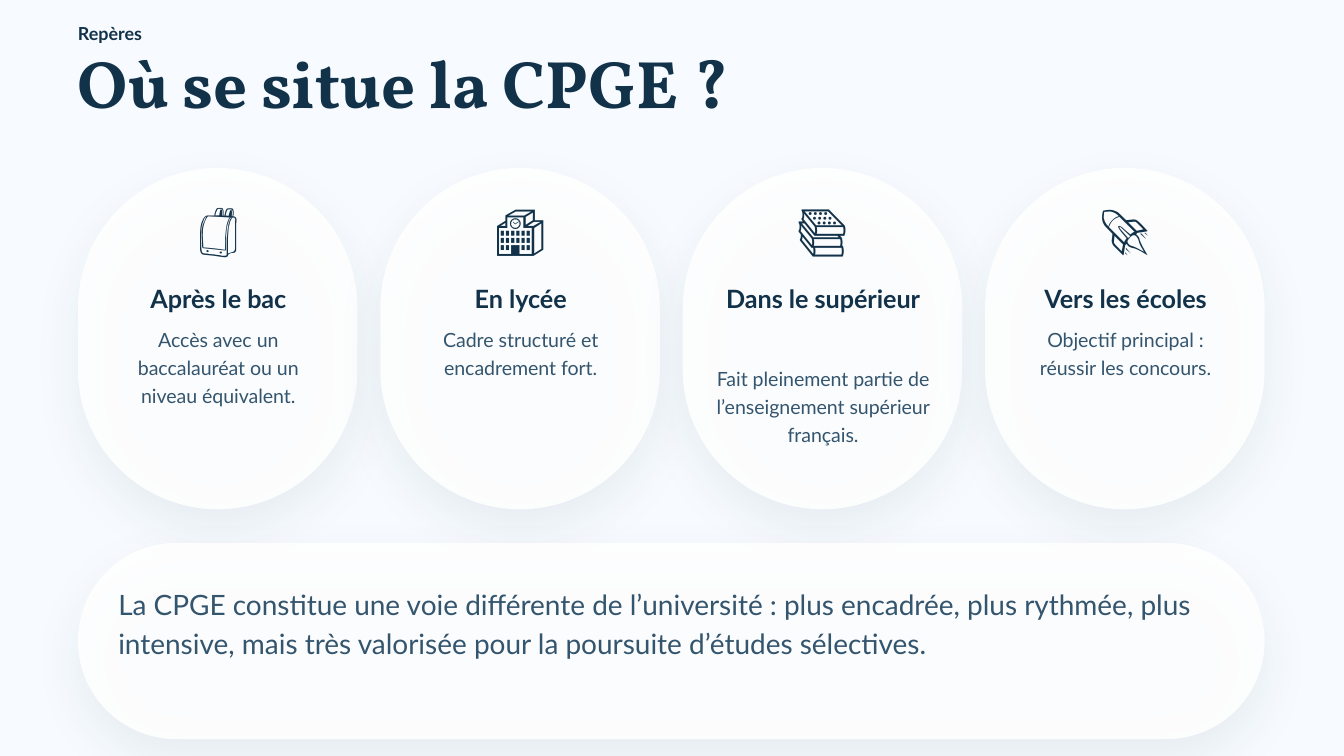
from dataclasses import dataclass

from lxml.etree import SubElement
from pptx import Presentation
from pptx.dml.color import RGBColor
from pptx.enum.shapes import MSO_SHAPE as Shape
from pptx.enum.text import MSO_ANCHOR as Anchor, MSO_AUTO_SIZE as Fit, PP_ALIGN as Align
from pptx.oxml.ns import qn
from pptx.util import Inches, Pt


@dataclass(frozen=True)
class Theme:
    back: str = "F7FBFF"
    panel: str = "FFFFFF"
    ink: str = "12324A"
    soft: str = "34556E"
    head: str = "Vollkorn"
    body: str = "Lato"
    # Type size and line height, in points
    tag: tuple = (9.6, 14.4)
    title: tuple = (36, 36)
    icon: tuple = (27, 30)
    label: tuple = (13.5, 21)
    note: tuple = (10.5, 15)
    lead: tuple = (15, 21)


THEME = Theme()

LEFT = 0.58
PITCH = 2.25
INSET = 0.25

# Icon, heading, note, heading height, note height
CARDS = [
    ("🎒", "Après le bac", "Accès avec un baccalauréat ou un niveau équivalent.", 0.29, 0.62),
    ("🏫", "En lycée", "Cadre structuré et encadrement fort.", 0.29, 0.42),
    ("📚", "Dans le supérieur",
     "Fait pleinement partie de l’enseignement supérieur français.", 0.58, 0.83),
    ("🚀", "Vers les écoles", "Objectif principal : réussir les concours.", 0.29, 0.42),
]
LEAD = ("La CPGE constitue une voie différente de l’université : plus encadrée, "
        "plus rythmée, plus intensive, mais très valorisée pour la poursuite "
        "d’études sélectives.")


def color(code):
    return RGBColor.from_string(code)


def place(box, x, y, w, h):
    box.left, box.top, box.width, box.height = map(Inches, (x, y, w, h))


def write(slide, text, area, size, box=None, font=THEME.body, ink=THEME.ink,
          bold=False, align=Align.LEFT):
    """Set text in the given placeholder, or in a new text box."""
    box = box or slide.shapes.add_textbox(0, 0, 0, 0)
    place(box, *area)
    frame = box.text_frame
    frame.auto_size = Fit.NONE
    frame.word_wrap = True
    frame.vertical_anchor = Anchor.TOP
    frame.margin_left = frame.margin_right = 0
    frame.margin_top = frame.margin_bottom = 0
    frame.text = text
    para = frame.paragraphs[0]
    para.alignment = align
    para.space_before = Pt(0)
    para.line_spacing = Pt(size[1])
    face = para.runs[0].font
    face.name, face.size, face.bold = font, Pt(size[0]), bold
    face.color.rgb = color(ink)


def add_alpha(node, share):
    SubElement(node, qn("a:alpha"), val=str(share * 1000))


def add_panel(slide, x, y, w, h):
    """Draw a translucent rounded panel with a soft drop shadow."""
    panel = slide.shapes.add_shape(Shape.ROUNDED_RECTANGLE, 0, 0, 0, 0)
    place(panel, x, y, w, h)
    panel.adjustments[0] = 0.5
    panel.fill.solid()
    panel.fill.fore_color.rgb = color(THEME.panel)
    panel.line.fill.background()
    panel.shadow.inherit = False
    props = panel._element.spPr
    add_alpha(props.find(qn("a:solidFill"))[0], 88)
    shade = SubElement(props.find(qn("a:effectLst")), qn("a:outerShdw"),
                       blurRad=str(Pt(25.5)), dist=str(Pt(10.5)),
                       dir="5400000", algn="ctr", rotWithShape="0")
    add_alpha(SubElement(shade, qn("a:srgbClr"), val=THEME.ink), 7)


def add_card(slide, x, icon, label, note, tall, deep):
    """Fill one card; the note starts just below its heading."""
    x, wide = x + INSET, 1.59
    write(slide, icon, (x, 1.5, wide, 0.42), THEME.icon, align=Align.CENTER)
    write(slide, label, (x, 2.04, wide, tall), THEME.label, bold=True, align=Align.CENTER)
    write(slide, note, (x, 2.04 + tall + 0.08, wide, deep), THEME.note,
          ink=THEME.soft, align=Align.CENTER)


def main():
    # Widescreen, 16 to 9
    deck = Presentation()
    deck.slide_width = Inches(10)
    deck.slide_height = Inches(10) * 9 // 16
    slide = deck.slides.add_slide(deck.slide_layouts[5])
    slide.background.fill.solid()
    slide.background.fill.fore_color.rgb = color(THEME.back)

    # Panels
    spots = [LEFT + PITCH * i for i in range(len(CARDS))]
    for x in spots:
        add_panel(slide, x, 1.25, 2.08, 2.54)
    add_panel(slide, LEFT, 4.04, 8.83, 1.46)

    # Heading
    write(slide, "Repères", (LEFT, 0.13, 9.01, 0.2), THEME.tag, bold=True)
    write(slide, "Où se situe la CPGE ?", (LEFT, 0.41, 9.01, 0.5), THEME.title,
          box=slide.shapes.title, font=THEME.head, bold=True)

    # Card texts
    for x, card in zip(spots, CARDS):
        add_card(slide, x, *card)

    # Summary
    write(slide, LEAD, (0.88, 4.33, 8.25, 0.88), THEME.lead, ink=THEME.soft)

    deck.save("out.pptx")


if __name__ == "__main__":
    main()
